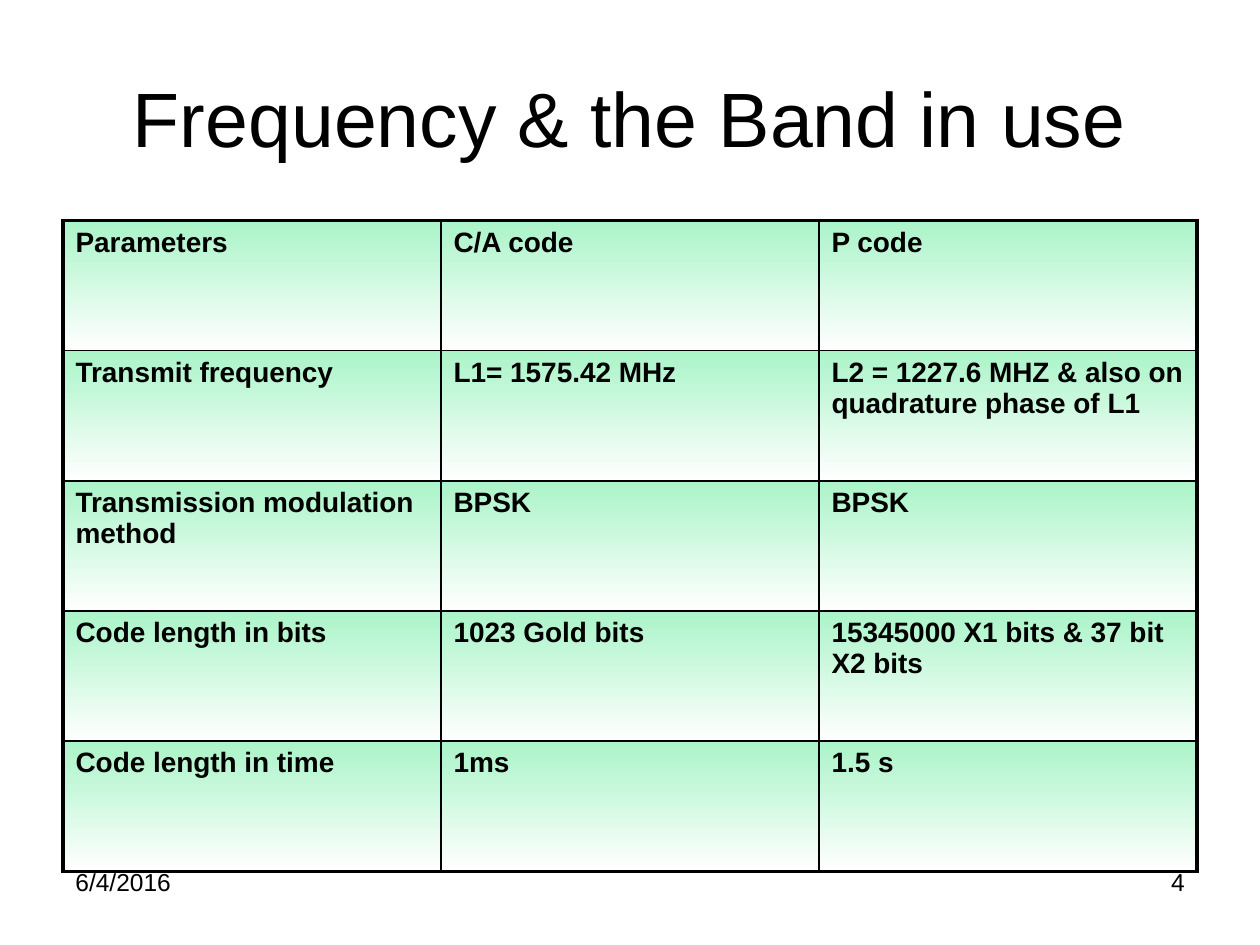
from pptx import Presentation
from pptx.dml.color import RGBColor
from pptx.enum.text import MSO_ANCHOR, PP_ALIGN
from pptx.oxml.ns import qn
from pptx.util import Pt
from lxml.etree import SubElement

BLACK, GREEN, WHITE = "000000", "AAF4C8", "FFFFFF"
THIN, THICK = 1, 2.25
MARGIN, WIDTH = 36, 648

ROWS = [
    ("Parameters", "C/A code", "P code"),
    ("Transmit frequency", "L1= 1575.42 MHz",
     "L2 = 1227.6 MHZ & also on quadrature phase of L1"),
    ("Transmission modulation method", "BPSK", "BPSK"),
    ("Code length in bits", "1023 Gold bits", "15345000 X1 bits & 37 bit X2 bits"),
    ("Code length in time", "1ms", "1.5 s"),
]


def color(hex_code):
    return RGBColor.from_string(hex_code)


def write(tf, text, size=16, bold=False, align=PP_ALIGN.LEFT):
    p = tf.paragraphs[0]
    p.alignment = align
    r = p.add_run()
    r.text = text
    r.font.name = "Arial"
    r.font.size = Pt(size)
    r.font.bold = bold
    r.font.color.rgb = color(BLACK)


def add_text(s, text, left, top, width, height, anchor=MSO_ANCHOR.TOP, **fmt):
    tf = s.shapes.add_textbox(Pt(left), Pt(top), Pt(width), Pt(height)).text_frame
    tf.word_wrap = True
    tf.vertical_anchor = anchor
    write(tf, text, **fmt)


def set_border(cell, side, width):
    tc_pr = cell._tc.get_or_add_tcPr()
    ln = SubElement(tc_pr, qn(f"a:ln{side}"), w=str(Pt(width)))
    fill = SubElement(ln, qn("a:solidFill"))
    SubElement(fill, qn("a:srgbClr"), val=BLACK)


def set_gradient(cell, top, bottom):
    cell.fill.gradient()
    cell.fill.gradient_angle = 270
    for stop, hex_code in zip(cell.fill.gradient_stops, (top, bottom)):
        stop.color.rgb = color(hex_code)


def add_grid(s, rows, left, top, width, height):
    n_rows, n_cols = len(rows), len(rows[0])
    table = s.shapes.add_table(n_rows, n_cols, Pt(left), Pt(top),
                               Pt(width), Pt(height)).table
    table.first_row = table.horz_banding = False
    for i, row in enumerate(rows):
        for j, text in enumerate(row):
            cell = table.cell(i, j)
            write(cell.text_frame, text, bold=True)
            # Thick lines on the outer edge, thin lines inside
            outer = {"L": j == 0, "R": j == n_cols - 1,
                     "T": i == 0, "B": i == n_rows - 1}
            for side, is_outer in outer.items():
                set_border(cell, side, THICK if is_outer else THIN)
            set_gradient(cell, GREEN, WHITE)


def main():
    prs = Presentation()
    prs.slide_width, prs.slide_height = Pt(720), Pt(540)
    s = prs.slides.add_slide(prs.slide_layouts[6])

    # Date and slide number
    add_text(s, "6/4/2016", MARGIN, 492, 168, 37.5, size=14)
    add_text(s, "4", MARGIN + WIDTH - 168, 492, 168, 37.5, size=14,
             align=PP_ALIGN.RIGHT)

    # Title
    add_text(s, "Frequency & the Band in use", MARGIN, 21.6, WIDTH, 90,
             anchor=MSO_ANCHOR.MIDDLE, size=44, align=PP_ALIGN.CENTER)

    # Code parameters
    add_grid(s, ROWS, MARGIN, 126, WIDTH, 372)

    prs.save("out.pptx")


if __name__ == "__main__":
    main()
